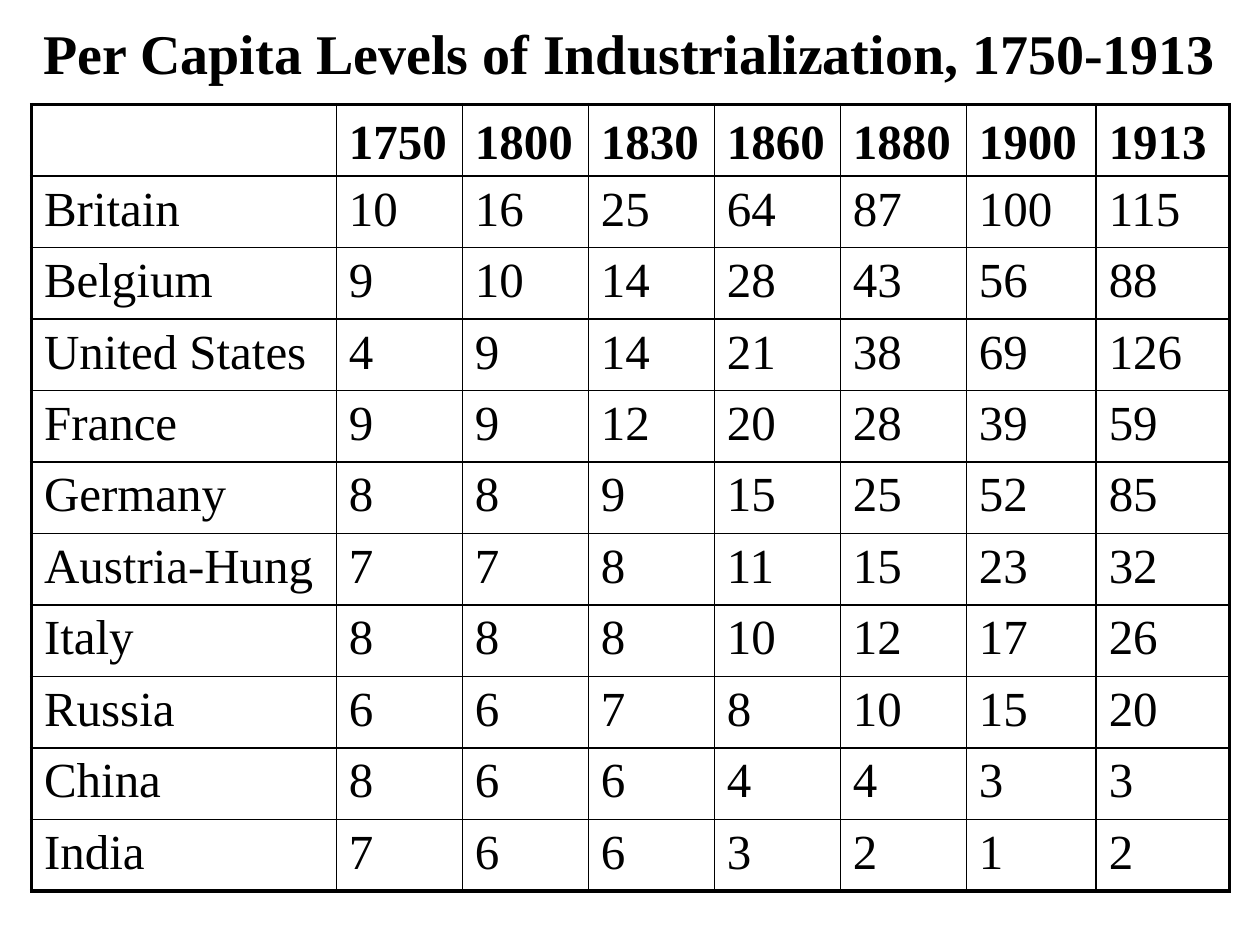
from lxml.etree import SubElement
from pptx import Presentation
from pptx.dml.color import RGBColor
from pptx.enum.text import MSO_ANCHOR, PP_ALIGN
from pptx.oxml.ns import qn
from pptx.util import Inches, Pt

COLORS = {"ink": "000000"}
YEARS = ["1750", "1800", "1830", "1860", "1880", "1900", "1913"]
LEVELS = {
    "Britain": [10, 16, 25, 64, 87, 100, 115],
    "Belgium": [9, 10, 14, 28, 43, 56, 88],
    "United States": [4, 9, 14, 21, 38, 69, 126],
    "France": [9, 9, 12, 20, 28, 39, 59],
    "Germany": [8, 8, 9, 15, 25, 52, 85],
    "Austria-Hung": [7, 7, 8, 11, 15, 23, 32],
    "Italy": [8, 8, 8, 10, 12, 17, 26],
    "Russia": [6, 6, 7, 8, 10, 15, 20],
    "China": [8, 6, 6, 4, 4, 3, 3],
    "India": [7, 6, 6, 3, 2, 1, 2],
}
COLUMN_WIDTHS = [2.42, 1, 1, 1, 1, 1, 1.03, 1.06]


class SlideWriter:
    font_name = "Times New Roman"
    title_size = 32
    cell_size = 28
    inner_border = 1
    outer_border = 2.25

    def __init__(self, slide):
        self.slide = slide

    def add_run(self, paragraph, wording, size, bold):
        run = paragraph.add_run()
        run.text = wording
        run.font.name = self.font_name
        run.font.size = Pt(size)
        run.font.bold = bold
        run.font.color.rgb = RGBColor.from_string(COLORS["ink"])

    def add_title(self, wording, left, top, width, height):
        title = self.slide.shapes.add_textbox(
            Inches(left), Inches(top), Inches(width), Inches(height)
        )
        frame = title.text_frame
        frame.word_wrap = True
        frame.vertical_anchor = MSO_ANCHOR.MIDDLE
        heading = frame.paragraphs[0]
        heading.alignment = PP_ALIGN.CENTER
        self.add_run(heading, wording, self.title_size, True)

    def set_borders(self, cell, outer_sides):
        properties = cell._tc.get_or_add_tcPr()
        for position, (side, is_outer) in enumerate(outer_sides.items()):
            weight = self.outer_border if is_outer else self.inner_border
            border = SubElement(properties, qn(f"a:ln{side}"), w=str(Pt(weight)))
            ink = SubElement(border, qn("a:solidFill"))
            SubElement(ink, qn("a:srgbClr"), val=COLORS["ink"])
            properties.insert(position, border)

    def add_table(self, rows, widths, left, top, height):
        table = self.slide.shapes.add_table(
            len(rows), len(widths), Inches(left), Inches(top),
            Inches(sum(widths)), Inches(height),
        ).table
        table.first_row = False
        table.horz_banding = False
        for column, width in zip(table.columns, widths):
            column.width = Inches(width)
        last_row, last_column = len(rows) - 1, len(widths) - 1
        for r, row in enumerate(rows):
            table.rows[r].height = Inches(height / len(rows))
            for c, entry in enumerate(row):
                cell = table.cell(r, c)
                is_header = r == 0
                cell.fill.background()
                cell.vertical_anchor = MSO_ANCHOR.BOTTOM if is_header else MSO_ANCHOR.TOP
                if entry != "":
                    paragraph = cell.text_frame.paragraphs[0]
                    self.add_run(paragraph, str(entry), self.cell_size, is_header)
                self.set_borders(cell, {
                    "L": c == 0, "R": c == last_column,
                    "T": r == 0, "B": r == last_row,
                })


def main():
    presentation = Presentation()
    presentation.slide_width = Inches(10)
    presentation.slide_height = Inches(7.5)
    writer = SlideWriter(presentation.slides.add_slide(presentation.slide_layouts[6]))
    writer.add_title("Per Capita Levels of Industrialization, 1750-1913", 0, 0, 10, 0.83)
    rows = [["", *YEARS]] + [[country, *levels] for country, levels in LEVELS.items()]
    writer.add_table(rows, COLUMN_WIDTHS, 0.25, 0.83, 6.23)
    presentation.save("out.pptx")


if __name__ == "__main__":
    main()
